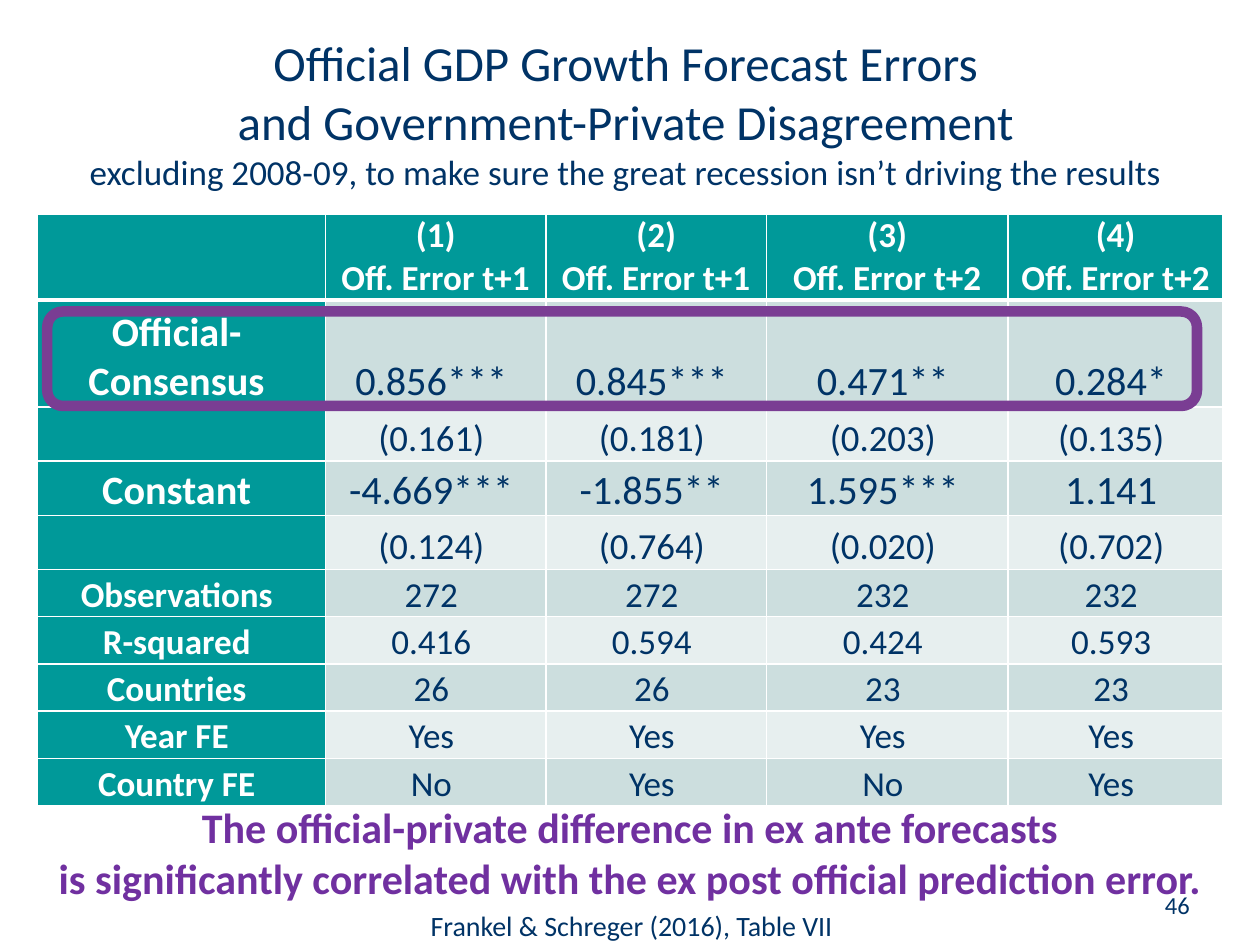
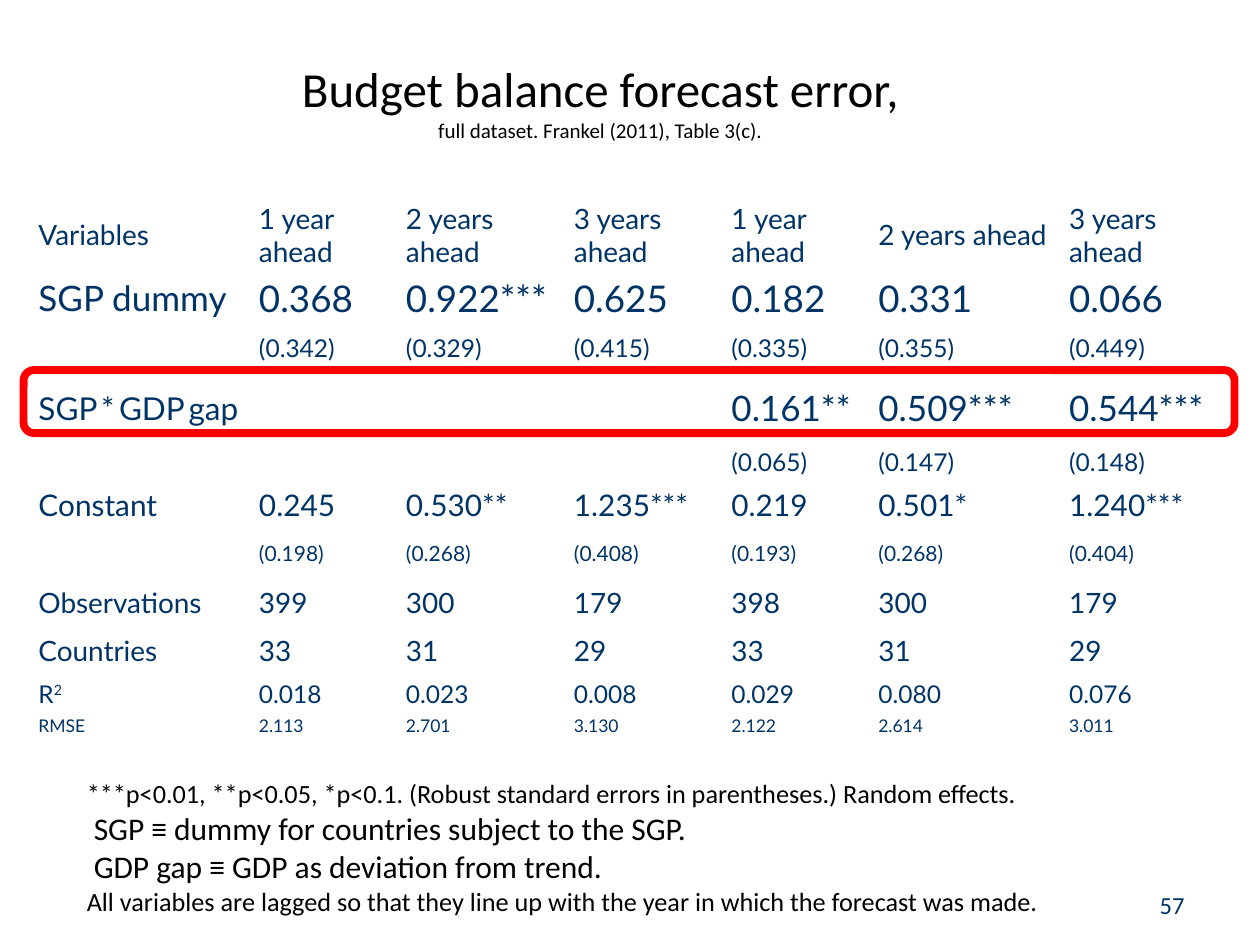
from lxml.etree import SubElement
from pptx import Presentation
from pptx.dml.color import RGBColor as Rgb
from pptx.enum.shapes import MSO_SHAPE as Shape
from pptx.enum.text import MSO_ANCHOR as Anchor, MSO_AUTO_SIZE as Auto, PP_ALIGN as Align
from pptx.oxml.ns import qn
from pptx.util import Pt

HUES = {
    "navy": "003366", "black": "000000", "white": "FFFFFF", "teal": "009999",
    "dark": "CCDEDE", "light": "E7EFEF", "grape": "7030A0", "plum": "7A3D93",
    "red": "FF0000",
}
BARE = "{2D5ABB26-0587-4C30-8999-92F81FD0307C}"

GROWTH = [
    (48, 20, 20, "|(1)\nOff. Error t+1|(2)\nOff. Error t+1|(3)\nOff. Error t+2|(4)\nOff. Error t+2"),
    (61, 23, 23, "Official-Consensus|0.856***|0.845***|0.471**|0.284*"),
    (31, 21, 21, "|(0.161)|(0.181)|(0.203)|(0.135)"),
    (31, 23, 23, "Constant|-4.669***|-1.855**|1.595***|1.141"),
    (31, 21, 21, "|(0.124)|(0.764)|(0.020)|(0.702)"),
    (27, 20, 20, "Observations|272|272|232|232"),
    (27, 20, 20, "R-squared|0.416|0.594|0.424|0.593"),
    (27, 20, 20, "Countries|26|26|23|23"),
    (27, 20, 20, "Year FE|Yes|Yes|Yes|Yes"),
    (27, 20, 20, "Country FE|No|Yes|No|Yes"),
]
BUDGET = [
    (42.5, 16, 16, "Variables|1 year ahead|2 years ahead|3 years ahead"
                   "|1 year ahead|2 years ahead|3 years ahead"),
    (29.5, 20, 21, "SGP dummy|0.368|0.922***|0.625|0.182|0.331|0.066"),
    (28, 14, 14, "|(0.342)|(0.329)|(0.415)|(0.335)|(0.355)|(0.449)"),
    (40.5, 18, 20, "||||0.161**|0.509***|0.544***"),
    (20, 14, 14, "||||(0.065)|(0.147)|(0.148)"),
    (28, 17, 17, "Constant|0.245|0.530**|1.235***|0.219|0.501*|1.240***"),
    (28, 12, 12, "|(0.198)|(0.268)|(0.408)|(0.193)|(0.268)|(0.404)"),
    (27.5, 16, 16, "Observations|399|300|179|398|300|179"),
    (28, 16, 16, "Countries|33|31|29|33|31|29"),
    (21, 14, 14, "|0.018|0.023|0.008|0.029|0.080|0.076"),
    (16, 10, 10, "RMSE|2.113|2.701|3.130|2.122|2.614|3.011"),
]


def color(name):
    """Return the colour of a named hue."""
    return Rgb.from_string(HUES[name])


class Deck:
    """Hold the style and the current slide."""

    def __init__(self):
        """Start an empty deck."""
        self.prs = Presentation()
        self.prs.slide_width, self.prs.slide_height = Pt(720), Pt(540)
        self.slide = None

    def add(self):
        """Start a new slide."""
        self.slide = self.prs.slides.add_slide(self.prs.slide_layouts[5])

    def style(self, run, size, hue="navy", bold=False, face="Calibri"):
        """Set the font of one run."""
        font = run.font
        font.name, font.size, font.bold = face, Pt(size), bold
        font.color.rgb = color(hue)

    def put(self, frame, lines, align, hue="navy", bold=False):
        """Put in one paragraph for each pair of text and size."""
        frame.word_wrap, frame.auto_size = True, Auto.NONE
        frame.text = "\n".join(text for text, _ in lines)
        for para, (_, size) in zip(frame.paragraphs, lines):
            para.alignment = align
            for run in para.runs:
                self.style(run, size, hue, bold)

    def title(self, box, lines, hue):
        """Move and fill the title placeholder."""
        head = self.slide.shapes.title
        head.left, head.top, head.width, head.height = map(Pt, box)
        head.text_frame.vertical_anchor = Anchor.MIDDLE
        self.put(head.text_frame, lines, Align.CENTER, hue)

    def text(self, box, lines, align=Align.LEFT, hue="navy", bold=False, anchor=Anchor.TOP):
        """Add a text box."""
        frame = self.slide.shapes.add_textbox(*map(Pt, box)).text_frame
        frame.vertical_anchor = anchor
        self.put(frame, lines, align, hue, bold)
        return frame

    def page(self, left, num):
        """Add the page number."""
        self.text((left, 491.5, 168, 37.5), [(num, 14)], Align.RIGHT, anchor=Anchor.BOTTOM)

    def frame(self, box, hue, width):
        """Add a hollow rounded frame."""
        ring = self.slide.shapes.add_shape(Shape.ROUNDED_RECTANGLE, *map(Pt, box))
        ring.shadow.inherit = False
        ring.fill.background()
        ring.line.color.rgb, ring.line.width = color(hue), Pt(width)

    def edge(self, cell, row):
        """Draw white borders, with a thick one under the header."""
        props = cell._tc.get_or_add_tcPr()
        thick = {"lnB": row == 0, "lnT": row == 1}
        for side in ("lnL", "lnR", "lnT", "lnB"):
            width = 3 if thick.get(side) else 1
            line = SubElement(props, qn("a:" + side), w=str(Pt(width)))
            fill = SubElement(line, qn("a:solidFill"))
            SubElement(fill, qn("a:srgbClr"), val=HUES["white"])

    def table(self, left, top, cols, rows, pads, anchor, align, face, banded):
        """Add a table and return it."""
        size = len(rows), len(cols), Pt(left), Pt(top), Pt(sum(cols)), Pt(sum(r[0] for r in rows))
        grid = self.slide.shapes.add_table(*size).table
        grid._tbl.tblPr.find(qn("a:tableStyleId")).text = BARE
        for col, width in zip(grid.columns, cols):
            col.width = Pt(width)
        for i, (height, first, rest, line) in enumerate(rows):
            grid.rows[i].height = Pt(height)
            for j, text in enumerate(line.split("|")):
                cell, points = grid.cell(i, j), rest if j else first
                head = banded and (i == 0 or j == 0)
                cell.margin_left, cell.margin_top = Pt(pads[0]), Pt(pads[1])
                cell.margin_right, cell.margin_bottom = Pt(pads[2] if i else pads[0]), Pt(pads[1])
                cell.vertical_anchor = anchor
                if banded:
                    self.edge(cell, i)
                    cell.fill.solid()
                    band = "dark" if i % 2 else "light"
                    cell.fill.fore_color.rgb = color("teal" if head else band)
                else:
                    cell.fill.background()
                cell.text_frame.text = text
                for para in cell.text_frame.paragraphs:
                    para.alignment = align
                    for run in para.runs:
                        self.style(run, points, "white" if head else "navy", head, face)
                    if not text:
                        para._p.get_or_add_endParaRPr().set("sz", str(points * 100))
        return grid

    def mix(self, cell, parts, face):
        """Fill a cell with runs of several sizes."""
        para = cell.text_frame.paragraphs[0]
        for text, size in parts:
            run = para.add_run()
            run.text = text
            self.style(run, size, face=face)
        return para.runs


def growth(deck):
    """Build the slide on growth forecast errors."""
    deck.add()
    deck.title((17, 14.5, 681, 99.5), [
        ("Official GDP Growth Forecast Errors", 28),
        ("and Government-Private Disagreement", 28),
        ("excluding 2008-09, to make sure the great recession isn’t driving the results", 20),
    ], "navy")
    deck.page(519, "46")
    deck.table(21, 122.5, (165, 126, 126, 138, 123), GROWTH, (5, 0, 10),
               Anchor.BOTTOM, Align.CENTER, "Calibri", True)
    deck.frame((27, 178, 657, 54), "plum", 6)
    deck.text((12, 454.5, 696, 65.5), [
        ("The official-private difference in ex ante forecasts", 24),
        ("is significantly correlated with the ex post official prediction error.", 24),
    ], Align.CENTER, "grape", True)
    deck.text((239, 515.5, 297, 26.5), [("Frankel & Schreger (2016), Table VII", 16)])


def budget(deck):
    """Build the slide on budget forecast errors."""
    deck.add()
    deck.title((150, 29.5, 386, 55.5), [
        ("Budget balance forecast error,", 28),
        ("full dataset. Frankel (2011), Table 3(c).", 12),
    ], "black")
    deck.page(516, "57")
    grid = deck.table(18, 113, (126, 84, 96, 90, 84, 109, 101), BUDGET, (4, 2, 4),
                      Anchor.MIDDLE, Align.LEFT, "Lato", False)
    deck.mix(grid.cell(3, 0), [("SGP", 18), (" ", 8), ("*", 18), (" ", 10),
                               ("GDP", 18), (" ", 8), ("gap", 18)], "Lato")
    power = deck.mix(grid.cell(9, 0), [("R", 14), ("2", 14)], "Lato")[1]
    power._r.get_or_add_rPr().set("baseline", "30000")
    notes = deck.text((42.5, 440.5, 567, 87), [
        ("***p<0.01, **p<0.05, *p<0.1. (Robust standard errors in parentheses.) Random effects.", 15),
        ("SGP ≡ dummy for countries subject to the SGP.", 18),
        ("GDP gap ≡ GDP as deviation from trend.", 18),
        ("All variables are lagged so that they line up with the year in which the forecast was made.", 15),
    ], hue="black", anchor=Anchor.MIDDLE)
    for para in notes.paragraphs[1:3]:
        para._p.get_or_add_pPr().set("marL", str(Pt(4)))
    deck.frame((13.5, 211.5, 692, 36), "red", 4.5)


def main():
    """Build and save the deck."""
    deck = Deck()
    growth(deck)
    budget(deck)
    deck.prs.save("out.pptx")


if __name__ == "__main__":
    main()
